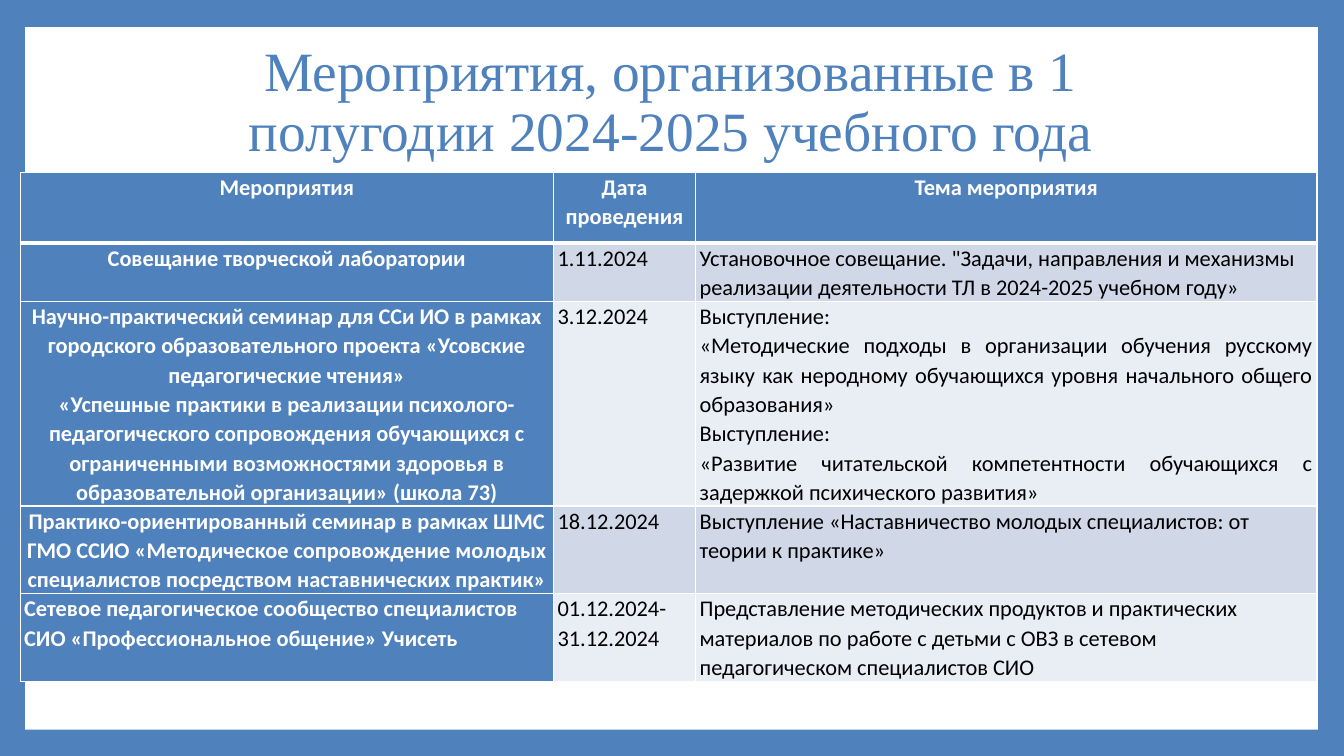
from dataclasses import dataclass

from lxml.etree import SubElement
from pptx import Presentation
from pptx.dml.color import RGBColor
from pptx.enum.shapes import MSO_SHAPE
from pptx.enum.text import MSO_ANCHOR, PP_ALIGN as Align
from pptx.oxml.ns import qn
from pptx.slide import Slide
from pptx.table import _Cell as Cell
from pptx.text.text import _Paragraph as Paragraph
from pptx.util import Inches, Pt

BLUE, WHITE, BLACK = "4F81BD", "FFFFFF", "000000"
BANDS = ("D0D8E8", "E9EDF4")
COLUMN_WIDTHS = (5.29, 1.41, 6.16)
HEADINGS = ("Мероприятия", "Дата проведения", "Тема мероприятия")


@dataclass
class Event:
    name: str
    date: str
    topic: str
    height: float
    name_align: Align = Align.CENTER
    justified: tuple[int, ...] = ()  # topic paragraphs set flush on both sides


EVENTS = (
    Event("Совещание творческой лаборатории", "1.11.2024",
          "Установочное совещание. \"Задачи, направления и механизмы реализации "
          "деятельности ТЛ в 2024-2025 учебном году»", 0.58),
    Event("Научно-практический семинар для ССи ИО в рамках городского образовательного "
          "проекта «Усовские педагогические чтения»\n"
          "«Успешные практики в реализации психолого-педагогического сопровождения "
          "обучающихся с ограниченными возможностями здоровья в образовательной "
          "организации» (школа 73)", "3.12.2024",
          "Выступление:\n"
          "«Методические подходы в организации обучения русскому языку как неродному "
          "обучающихся уровня начального общего образования»\n"
          "Выступление:\n"
          "«Развитие читательской компетентности обучающихся с задержкой психического "
          "развития»", 2.03, justified=(0, 1, 3)),
    Event("Практико-ориентированный семинар в рамках ШМС ГМО ССИО «Методическое "
          "сопровождение молодых специалистов посредством наставнических практик»",
          "18.12.2024",
          "Выступление «Наставничество молодых специалистов: от теории к практике»", 0.87),
    Event("Сетевое педагогическое сообщество специалистов СИО «Профессиональное общение» "
          "Учисеть", "01.12.2024-31.12.2024",
          "Представление методических продуктов и практических материалов по работе с "
          "детьми с ОВЗ в сетевом педагогическом специалистов СИО", 0.87, Align.LEFT),
)
HEADER_HEIGHT = 0.7


def rgb(value: str) -> RGBColor:
    return RGBColor.from_string(value)


def format_paragraph(paragraph: Paragraph, font: str, size: float, color: str,
                     align: Align, spacing: float, bold: bool = False) -> None:
    paragraph.alignment = align
    paragraph.line_spacing = spacing
    for run in paragraph.runs:
        run.font.name = font
        run.font.size = Pt(size)
        run.font.bold = bold
        run.font.color.rgb = rgb(color)


def add_borders(cell: Cell, top: float, bottom: float) -> None:
    """Draw white cell edges; widths are in points."""
    properties = cell._tc.get_or_add_tcPr()
    for side, width in (("L", 1), ("R", 1), ("T", top), ("B", bottom)):
        line = SubElement(properties, qn(f"a:ln{side}"), w=str(Pt(width)))
        SubElement(SubElement(line, qn("a:solidFill")), qn("a:srgbClr"), val=WHITE)


def fill_cell(cell: Cell, text: str, fill: str, align: Align, top: float = 1,
              bottom: float = 1, justified: tuple[int, ...] = ()) -> None:
    add_borders(cell, top, bottom)
    cell.fill.solid()
    cell.fill.fore_color.rgb = rgb(fill)
    cell.margin_left = cell.margin_right = Inches(0.04)
    cell.margin_top = cell.margin_bottom = 0
    cell.text_frame.text = text
    on_blue = fill == BLUE
    for index, paragraph in enumerate(cell.text_frame.paragraphs):
        format_paragraph(paragraph, "Calibri", 16, WHITE if on_blue else BLACK,
                         Align.JUSTIFY if index in justified else align, 1.07, on_blue)


def add_frame(slide: Slide) -> None:
    """Blue background with a white panel inside it."""
    slide.background.fill.solid()
    slide.background.fill.fore_color.rgb = rgb(BLUE)
    panel = slide.shapes.add_shape(MSO_SHAPE.RECTANGLE, Inches(0.25), Inches(0.27),
                                   Inches(12.82), Inches(6.97))
    panel.shadow.inherit = False
    panel.fill.solid()
    panel.fill.fore_color.rgb = rgb(WHITE)
    panel.line.fill.background()


def add_title(slide: Slide) -> None:
    title = slide.shapes.add_textbox(Inches(1.25), Inches(0.67),
                                     Inches(10.8), Inches(0.71)).text_frame
    title.word_wrap = True
    title.vertical_anchor = MSO_ANCHOR.MIDDLE
    title.text = "Мероприятия, организованные в 1 полугодии 2024-2025 учебного года"
    format_paragraph(title.paragraphs[0], "Times New Roman", 39.6, BLUE, Align.CENTER, 0.9)


def add_schedule(slide: Slide) -> None:
    heights = (HEADER_HEIGHT, *(event.height for event in EVENTS))
    schedule = slide.shapes.add_table(
        len(heights), len(COLUMN_WIDTHS), Inches(0.2), Inches(1.71),
        Inches(sum(COLUMN_WIDTHS)), Inches(sum(heights))).table
    schedule.horz_banding = False
    for column, width in zip(schedule.columns, COLUMN_WIDTHS):
        column.width = Inches(width)
    for row, height in zip(schedule.rows, heights):
        row.height = Inches(height)

    for column, heading in enumerate(HEADINGS):
        fill_cell(schedule.cell(0, column), heading, BLUE, Align.CENTER, bottom=3)
    for row, event in enumerate(EVENTS, start=1):
        band = BANDS[(row - 1) % 2]
        top = 3 if row == 1 else 1
        fill_cell(schedule.cell(row, 0), event.name, BLUE, event.name_align, top)
        fill_cell(schedule.cell(row, 1), event.date, band, Align.LEFT, top)
        fill_cell(schedule.cell(row, 2), event.topic, band, Align.LEFT, top,
                  justified=event.justified)


def main() -> None:
    deck = Presentation()
    deck.slide_width, deck.slide_height = Inches(13.33), Inches(7.5)
    slide = deck.slides.add_slide(deck.slide_layouts[6])
    add_frame(slide)
    add_title(slide)
    add_schedule(slide)
    deck.save("out.pptx")


if __name__ == "__main__":
    main()
